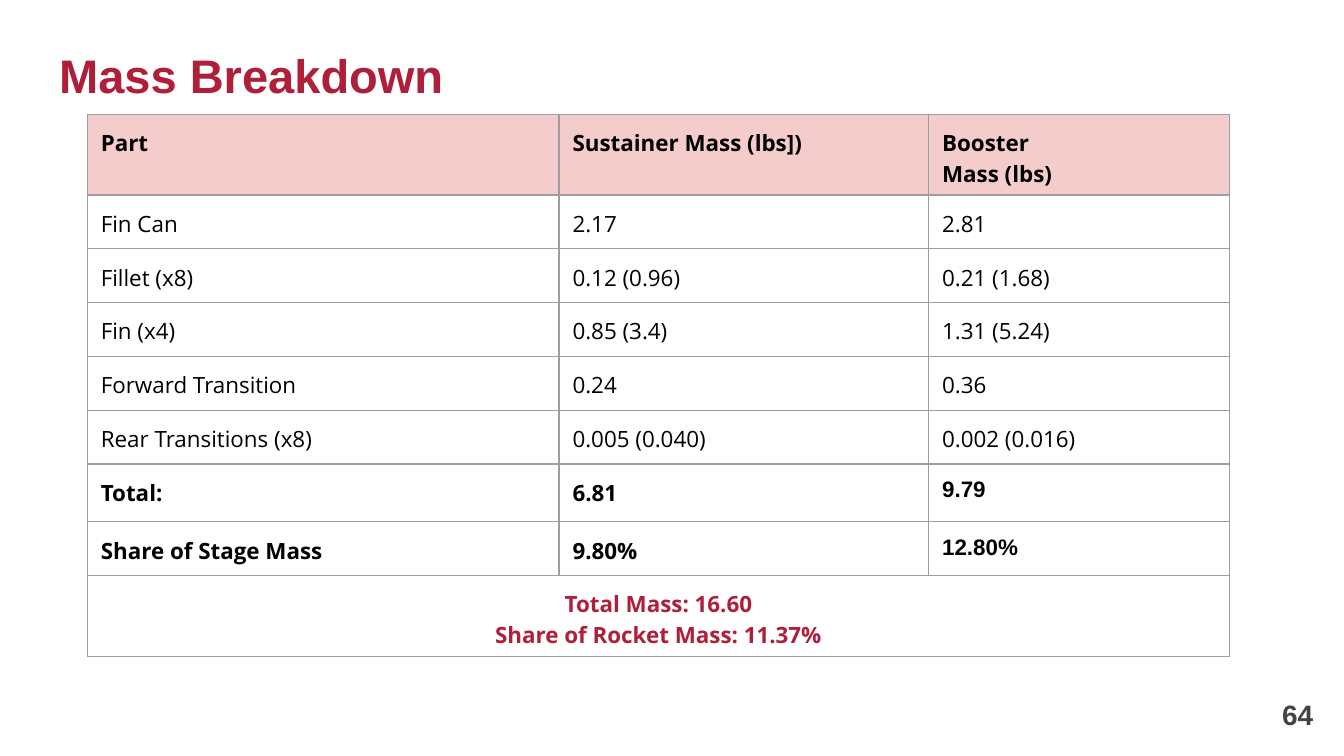
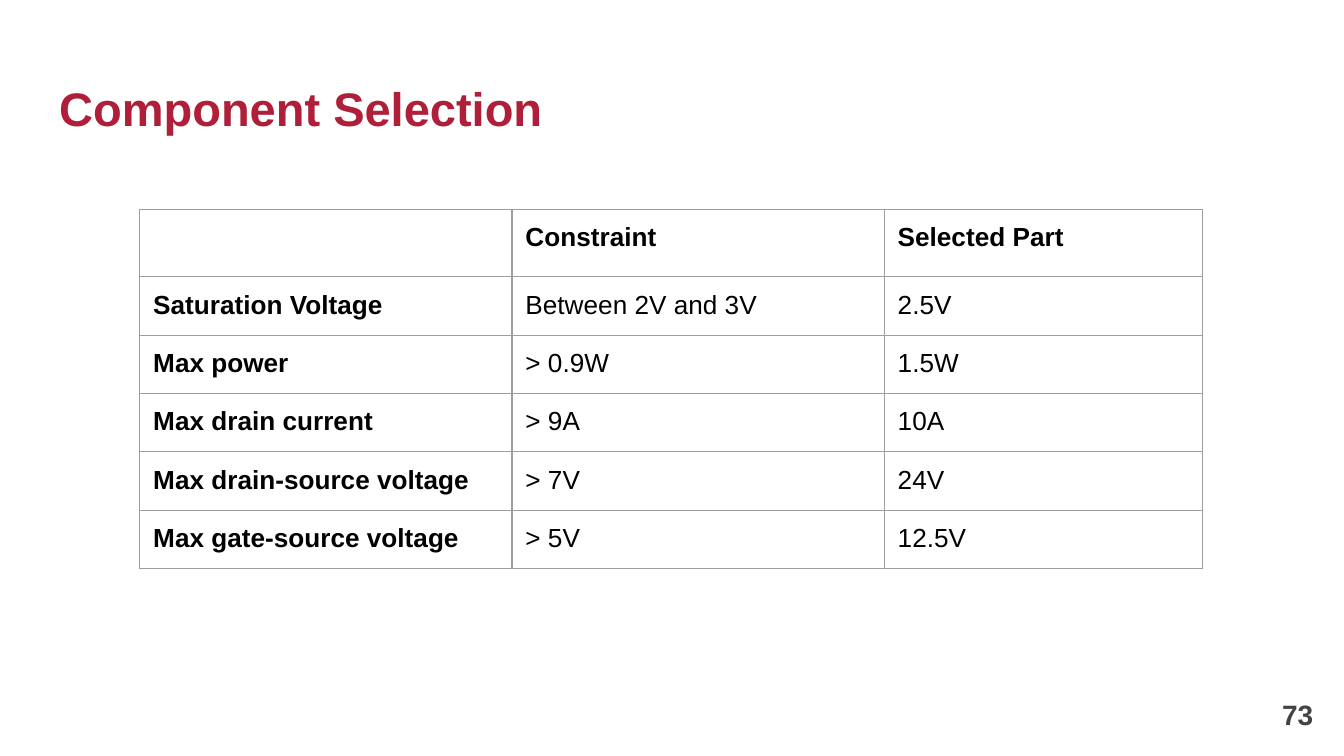
import pptx
import pptx.dml.color
import pptx.enum.text
import pptx.oxml
import pptx.oxml.ns
import pptx.util

Inches = pptx.util.Inches
Points = pptx.util.Pt
Align = pptx.enum.text.PP_ALIGN
Anchor = pptx.enum.text.MSO_ANCHOR

# Shared look
COLORS = {"crimson": "AF1F39", "black": "000000", "gray": "434343",
          "border": "9E9E9E", "pink": "F4CCCC"}
TITLE = {"size": 25.2, "name": "Arial", "color": "crimson", "bold": True}
NUMBER = {"size": 15, "name": "Arial", "color": "gray", "bold": True}
MASS = {"size": 12, "name": "Open Sans", "color": "black", "bold": False}
COMPONENT = {"size": 14, "name": "Arial", "color": "black", "bold": False}
INSET = 0.1
BORDER_WIDTH = 0.75
TABLE_FRAME = 3.28  # nominal frame side; columns and rows set the real extent

# Content
MASS_ROWS = [
    ("Part", "Sustainer Mass (lbs])", "Booster\nMass (lbs)"),
    ("Fin Can", "2.17", "2.81"),
    ("Fillet (x8)", "0.12 (0.96)", "0.21 (1.68)"),
    ("Fin (x4)", "0.85 (3.4)", "1.31 (5.24)"),
    ("Forward Transition", "0.24", "0.36"),
    ("Rear Transitions (x8)", "0.005 (0.040)", "0.002 (0.016)"),
    ("Total:", "6.81", "9.79"),
    ("Share of Stage Mass", "9.80%", "12.80%"),
    ("Total Mass: 16.60\nShare of Rocket Mass: 11.37%", "", ""),
]
COMPONENT_ROWS = [
    ("", "Constraint", "Selected Part"),
    ("Saturation Voltage", "Between 2V and 3V", "2.5V"),
    ("Max power", "> 0.9W", "1.5W"),
    ("Max drain current", "> 9A", "10A"),
    ("Max drain-source voltage", "> 7V", "24V"),
    ("Max gate-source voltage", "> 5V", "12.5V"),
]


def rgb(color):
    return pptx.dml.color.RGBColor.from_string(COLORS[color])


def write(frame, text, style, align=Align.LEFT):
    """Fill a text frame, one paragraph per line."""
    frame.word_wrap = True
    frame.text = text
    for paragraph in frame.paragraphs:
        paragraph.alignment = align
        for run in paragraph.runs:
            run.font.size = Points(style["size"])
            run.font.color.rgb = rgb(style["color"])
            for key in ("name", "bold"):
                setattr(run.font, key, style[key])


def set_margins(holder):
    for side in ("left", "top", "right", "bottom"):
        setattr(holder, f"margin_{side}", Inches(INSET))


def add_borders(cell):
    properties = cell._tc.get_or_add_tcPr()
    for side in "LRTB":
        properties.append(pptx.oxml.parse_xml(
            f'<a:ln{side} {pptx.oxml.ns.nsdecls("a")} w="{Points(BORDER_WIDTH)}">'
            f'<a:solidFill><a:srgbClr val="{COLORS["border"]}"/></a:solidFill>'
            f'</a:ln{side}>'))


def add_slide(presentation, title, title_top, number):
    slide = presentation.slides.add_slide(presentation.slide_layouts[5])
    heading = slide.shapes.title
    heading.left, heading.top = Inches(0.34), Inches(title_top)
    heading.width, heading.height = Inches(9.32), Inches(0.63)
    box = slide.shapes.add_textbox(Inches(9.27), Inches(5.1), Inches(0.6), Inches(0.43))
    for shape, text, style, align in ((heading, title, TITLE, Align.LEFT),
                                      (box, number, NUMBER, Align.RIGHT)):
        set_margins(shape.text_frame)
        shape.text_frame.vertical_anchor = Anchor.MIDDLE
        write(shape.text_frame, text, style, align)
    return slide


def add_table(slide, left, top, widths, heights, rows, style_for):
    """Draw a bordered table; style_for(row, column) gives each text style."""
    side = Inches(TABLE_FRAME)
    frame = slide.shapes.add_table(len(rows), len(widths), Inches(left), Inches(top),
                                   side, side)
    table = frame.table
    table.first_row = table.horz_banding = False
    for column, width in zip(table.columns, widths):
        column.width = Inches(width)
    for row, height in zip(table.rows, heights):
        row.height = Inches(height)
    # Changing columns and rows resizes the frame, so restore it
    frame.width = frame.height = side
    for i, texts in enumerate(rows):
        for j, text in enumerate(texts):
            cell = table.cell(i, j)
            set_margins(cell)
            add_borders(cell)
            cell.fill.background()
            if text:
                write(cell.text_frame, text, style_for(i, j))
    return table


def mass_style(row, column):
    style = dict(MASS, bold=row == 0 or row >= 6)
    if row in (6, 7) and column == 2:
        style["name"] = "Arial"
    if row == 8:
        style["color"] = "crimson"
    return style


def component_style(row, column):
    return dict(COMPONENT, bold=row == 0 or column == 0)


def main():
    presentation = pptx.Presentation()
    presentation.slide_width = Inches(10)
    presentation.slide_height = Inches(10) * 9 // 16

    # Mass breakdown: tinted header and a merged summary row
    slide = add_slide(presentation, "Mass Breakdown", 0.24, "64")
    table = add_table(slide, 0.65, 0.85, (3.51, 2.75, 2.24),
                      [0.43] + [0.29] * 5 + [0.43, 0.29, 0.44], MASS_ROWS, mass_style)
    for cell in table.rows[0].cells:
        cell.fill.solid()
        cell.fill.fore_color.rgb = rgb("pink")
    summary = table.cell(8, 0)
    summary.merge(table.cell(8, 2))
    summary.vertical_anchor = Anchor.MIDDLE
    for paragraph in summary.text_frame.paragraphs:
        paragraph.alignment = Align.CENTER

    # Component selection
    slide = add_slide(presentation, "Component Selection", 0.49, "73")
    add_table(slide, 1.04, 1.56, (2.77, 2.77, 2.37), [0.42] * 6,
              COMPONENT_ROWS, component_style)

    presentation.save("out.pptx")


if __name__ == "__main__":
    main()
